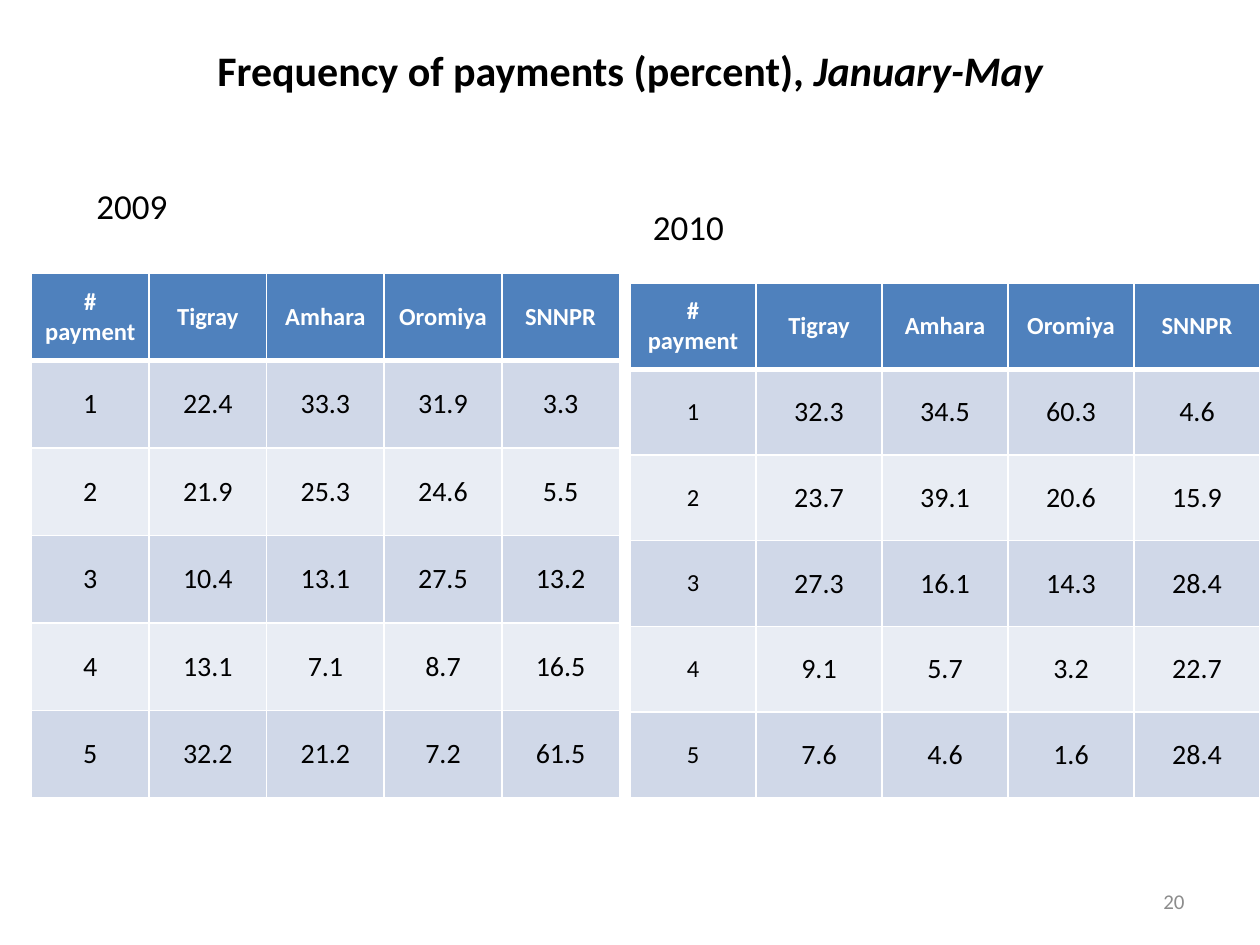
from pptx import Presentation
from pptx.dml.color import RGBColor
from pptx.enum.text import MSO_ANCHOR as Anchor, PP_ALIGN as Align
from pptx.oxml.ns import qn
from pptx.util import Pt
from lxml.etree import SubElement as Sub

HEAD = ["# payment", "Tigray", "Amhara", "Oromiya", "SNNPR"]
PAID_09 = [
    ["1", "22.4", "33.3", "31.9", "3.3"],
    ["2", "21.9", "25.3", "24.6", "5.5"],
    ["3", "10.4", "13.1", "27.5", "13.2"],
    ["4", "13.1", "7.1", "8.7", "16.5"],
    ["5", "32.2", "21.2", "7.2", "61.5"],
]
PAID_10 = [
    ["1", "32.3", "34.5", "60.3", "4.6"],
    ["2", "23.7", "39.1", "20.6", "15.9"],
    ["3", "27.3", "16.1", "14.3", "28.4"],
    ["4", "9.1", "5.7", "3.2", "22.7"],
    ["5", "7.6", "4.6", "1.6", "28.4"],
]


def tint(code):
    return RGBColor.from_string(code)


def write(para, text, size=20, color="000000", bold=False, italic=False,
          align=Align.LEFT, face="Calibri"):
    para.alignment = align
    run = para.add_run()
    run.text = text
    font = run.font
    font.name, font.size = face, Pt(size)
    font.bold, font.italic = bold, italic
    font.color.rgb = tint(color)


class Page:
    blue = "4F81BD"
    bands = ["D0D8E8", "E9EDF4"]
    white = "FFFFFF"
    grey = "8C8C8C"

    def __init__(self, deck):
        self.slide = deck.slides.add_slide(deck.slide_layouts[6])

    def label(self, box, parts, anchor=Anchor.TOP, **style):
        frame = self.slide.shapes.add_textbox(*map(Pt, box)).text_frame
        frame.word_wrap = True
        frame.vertical_anchor = anchor
        for text, extra in parts:
            write(frame.paragraphs[0], text, **style, **extra)

    def edge(self, cell, side, width):
        line = Sub(cell._tc.get_or_add_tcPr(), qn("a:ln" + side), w=str(Pt(width)))
        fill = Sub(line, qn("a:solidFill"))
        Sub(fill, qn("a:srgbClr"), val=self.white)

    def cell(self, cell, text, row, size):
        top = row == 0
        cell.margin_left = cell.margin_right = Pt(5.4)
        cell.margin_top = cell.margin_bottom = 0
        cell.vertical_anchor = Anchor.MIDDLE
        widths = {"L": 1, "R": 1, "T": 3 if row == 1 else 1, "B": 3 if top else 1}
        for side, width in widths.items():
            self.edge(cell, side, width)
        cell.fill.solid()
        cell.fill.fore_color.rgb = tint(self.blue if top else self.bands[(row - 1) % 2])
        write(cell.text_frame.paragraphs[0], text, size=size, bold=top,
              color=self.white if top else "000000", align=Align.CENTER)

    def table(self, box, data, first):
        rows = [HEAD] + data
        grid = self.slide.shapes.add_table(len(rows), len(HEAD), *map(Pt, box)).table
        for col in grid.columns:
            col.width = Pt(box[2] / len(HEAD))
        for r, row in enumerate(rows):
            grid.rows[r].height = Pt(box[3] / len(rows))
            for c, text in enumerate(row):
                size = 14 if r == 0 else first if c == 0 else 16
                self.cell(grid.cell(r, c), text, r, size)


def main():
    deck = Presentation()
    deck.slide_width, deck.slide_height = Pt(720), Pt(540)
    page = Page(deck)
    page.label((36, 21.6, 648, 90),
               [("Frequency of payments (percent), ", {}), ("January-May", {"italic": True})],
               size=24, bold=True, align=Align.CENTER)
    page.table((18, 156, 336, 300), PAID_09, first=16)
    page.label((366, 114, 318, 368.5), [("2010", {})])
    page.label((48, 102, 294, 31.5), [("2009", {})])
    page.table((360, 162, 360, 294), PAID_10, first=14)
    page.label((516, 500.5, 168, 28.75), [("20", {})], anchor=Anchor.MIDDLE,
               size=12, color=page.grey, align=Align.RIGHT)
    deck.save("out.pptx")


if __name__ == "__main__":
    main()
